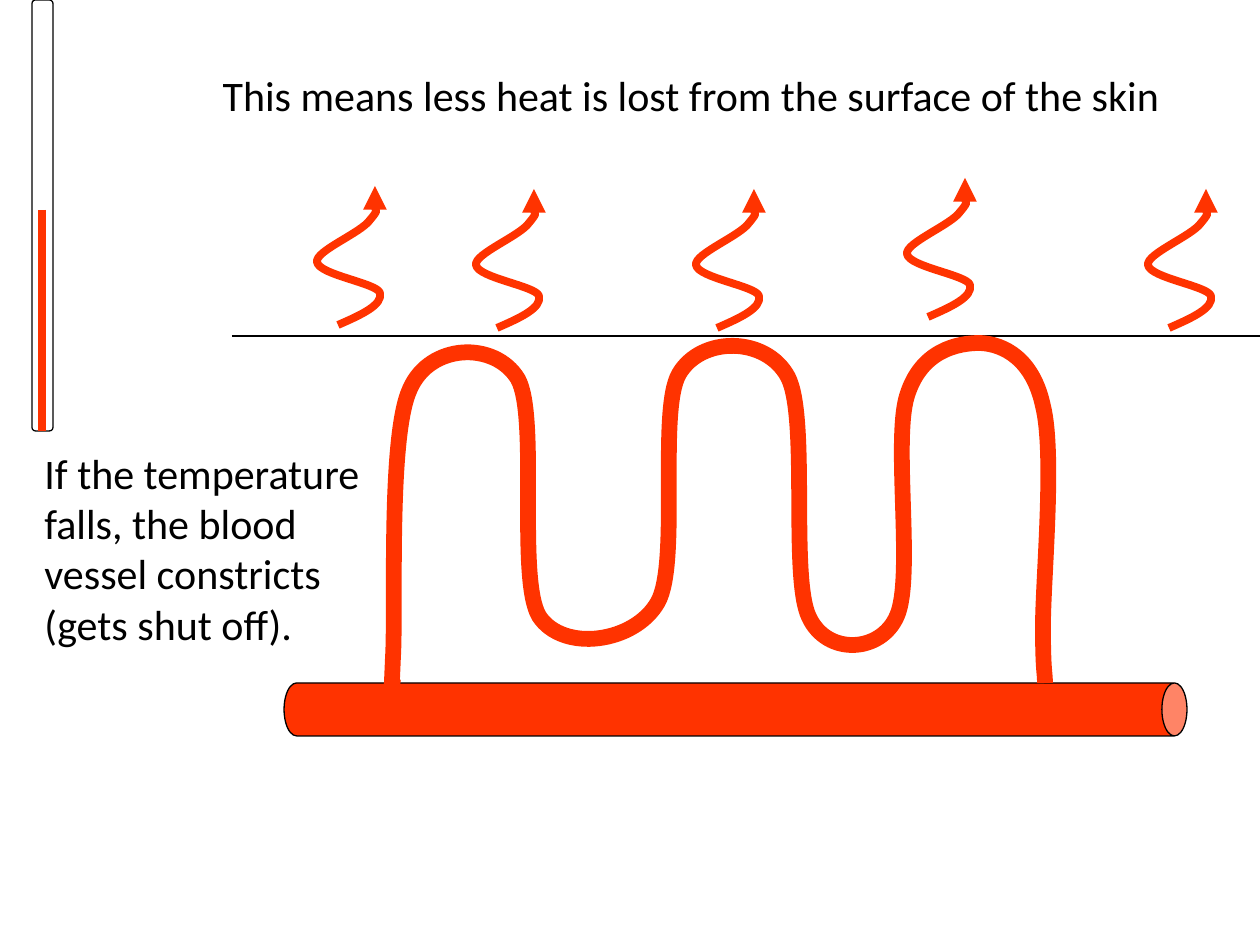
from pptx import Presentation
from pptx.dml.color import RGBColor
from pptx.enum.dml import MSO_LINE
from pptx.enum.shapes import MSO_CONNECTOR, MSO_SHAPE
from pptx.enum.text import MSO_ANCHOR, MSO_AUTO_SIZE, PP_ALIGN
from pptx.oxml.ns import qn
from pptx.util import Pt
from lxml import etree

CAN, ROUNDED = MSO_SHAPE.CAN, MSO_SHAPE.ROUNDED_RECTANGLE
STRAIGHT, SOLID = MSO_CONNECTOR.STRAIGHT, MSO_LINE.SOLID
LEFT, TOP = PP_ALIGN.LEFT, MSO_ANCHOR.TOP
GROW = MSO_AUTO_SIZE.SHAPE_TO_FIT_TEXT

THEME = {
    "font": "Calibri", "size": 24,
    "ink": RGBColor(0x00, 0x00, 0x00), "blood": RGBColor(0xFF, 0x33, 0x00),
    "thin": 0.75, "medium": 4.5, "thick": 9,
}
SCALE = 914400 / 126  # EMU per px

# Content: boxes are left, top, width, height in px
HEADLINE = ("This means less heat is lost from the surface of the skin",
            (210, 63, 1008, 63))
CAPTION = ("If the temperature falls, the blood vessel constricts (gets shut off).",
           (32, 441, 346, 214))
ARTERY = (709, 258, 53, 903)  # before its quarter turn
THERMOMETER = (32, 0, 21, 431)
SKIN = (232, 336, 1260, 336)
MERCURY = [(42, 325, 42, 431), (42, 210, 42, 328)]

# Curves: a start point, then three points for each Bézier segment
CAPILLARY = [
    (393, 679),
    (391, 697), (391, 706), (393, 658),
    (396, 610), (388, 436), (410, 389),
    (430, 343), (495, 341), (518, 379),
    (539, 417), (517, 578), (539, 616),
    (563, 653), (635, 643), (658, 602),
    (680, 562), (658, 411), (679, 374),
    (701, 336), (766, 336), (788, 377),
    (809, 418), (790, 577), (809, 617),
    (827, 656), (881, 653), (897, 616),
    (914, 578), (893, 441), (907, 396),
    (921, 350), (958, 343), (980, 343),
    (1004, 344), (1033, 359), (1043, 406),
    (1055, 454), (1043, 580), (1043, 626),
    (1043, 673), (1045, 671), (1045, 683),
]
HEAT_WAVE = [
    (0, 0),
    (23, -10), (45, -20), (42, -32),
    (39, -42), (-19, -50), (-21, -63),
    (-23, -74), (23, -92), (32, -105),
    (42, -117), (35, -131), (37, -139),
]
HEAT_STARTS = [(338, 325), (497, 328), (717, 328), (928, 317), (1169, 328)]


def emu(lengths):
    return [round(length * SCALE) for length in lengths]


def set_line(line, color, width):
    line.color.rgb = THEME[color]
    line.width = Pt(THEME[width])
    line.dash_style = SOLID


def add_preset(shapes, kind, box, adjustment, fill=None):
    shape = shapes.add_shape(kind, *emu(box))
    shape.adjustments[0] = adjustment
    shape.shadow.inherit = False
    if fill:
        shape.fill.solid()
        shape.fill.fore_color.rgb = THEME[fill]
    else:
        shape.fill.background()
    set_line(shape.line, "ink", "thin")
    return shape


def add_line(shapes, ends, color, width):
    connector = shapes.add_connector(STRAIGHT, *emu(ends))
    set_line(connector.line, color, width)
    etree.SubElement(connector._element.spPr, qn("a:effectLst"))


def add_curve(shapes, points, width, arrow=False):
    builder = shapes.build_freeform(*points[0], scale=SCALE)
    builder.add_line_segments(points[1:], close=False)
    curve = builder.convert_to_shape()
    # Each run of three line segments becomes one cubic Bézier
    steps = list(curve._element.iter(qn("a:lnTo")))
    for first, second, third in zip(steps[::3], steps[1::3], steps[2::3]):
        first.tag = qn("a:cubicBezTo")
        for extra in (second, third):
            first.append(extra[0])
            extra.getparent().remove(extra)
    curve.shadow.inherit = False
    curve.fill.background()
    set_line(curve.line, "blood", width)
    if arrow:
        etree.SubElement(curve.line._get_or_add_ln(), qn("a:tailEnd"), type="triangle")


def write_text(holder, text, box, size=THEME["size"], color="ink"):
    holder.left, holder.top, holder.width, holder.height = emu(box)
    frame = holder.text_frame
    frame.word_wrap = True
    frame.auto_size = GROW
    frame.vertical_anchor = TOP
    paragraph = frame.paragraphs[0]
    paragraph.alignment = LEFT
    run = paragraph.add_run()
    run.text = text
    run.font.name = THEME["font"]
    run.font.size = Pt(size)
    run.font.color.rgb = THEME[color]


def main():
    deck = Presentation()
    deck.slide_width, deck.slide_height = emu((1260, 945))
    slide = deck.slides.add_slide(deck.slide_layouts[5])
    shapes = slide.shapes

    # Artery and skin surface
    artery = add_preset(shapes, CAN, ARTERY, 0.474, fill="blood")
    artery.rotation = 90
    add_line(shapes, SKIN, "ink", "thin")

    # Thermometer
    add_preset(shapes, ROUNDED, THERMOMETER, 0.167)
    for column in MERCURY:
        add_line(shapes, column, "blood", "medium")

    # Capillary loops
    add_curve(shapes, CAPILLARY, "thick")

    # Heat leaving the skin
    heat = shapes.add_group_shape()
    for x, y in HEAT_STARTS:
        wave = [(x + dx, y + dy) for dx, dy in HEAT_WAVE]
        add_curve(heat.shapes, wave, "medium", arrow=True)

    # Wording
    write_text(shapes.title, *HEADLINE)
    write_text(shapes.add_textbox(0, 0, 0, 0), *CAPTION)

    deck.save("out.pptx")


if __name__ == "__main__":
    main()
